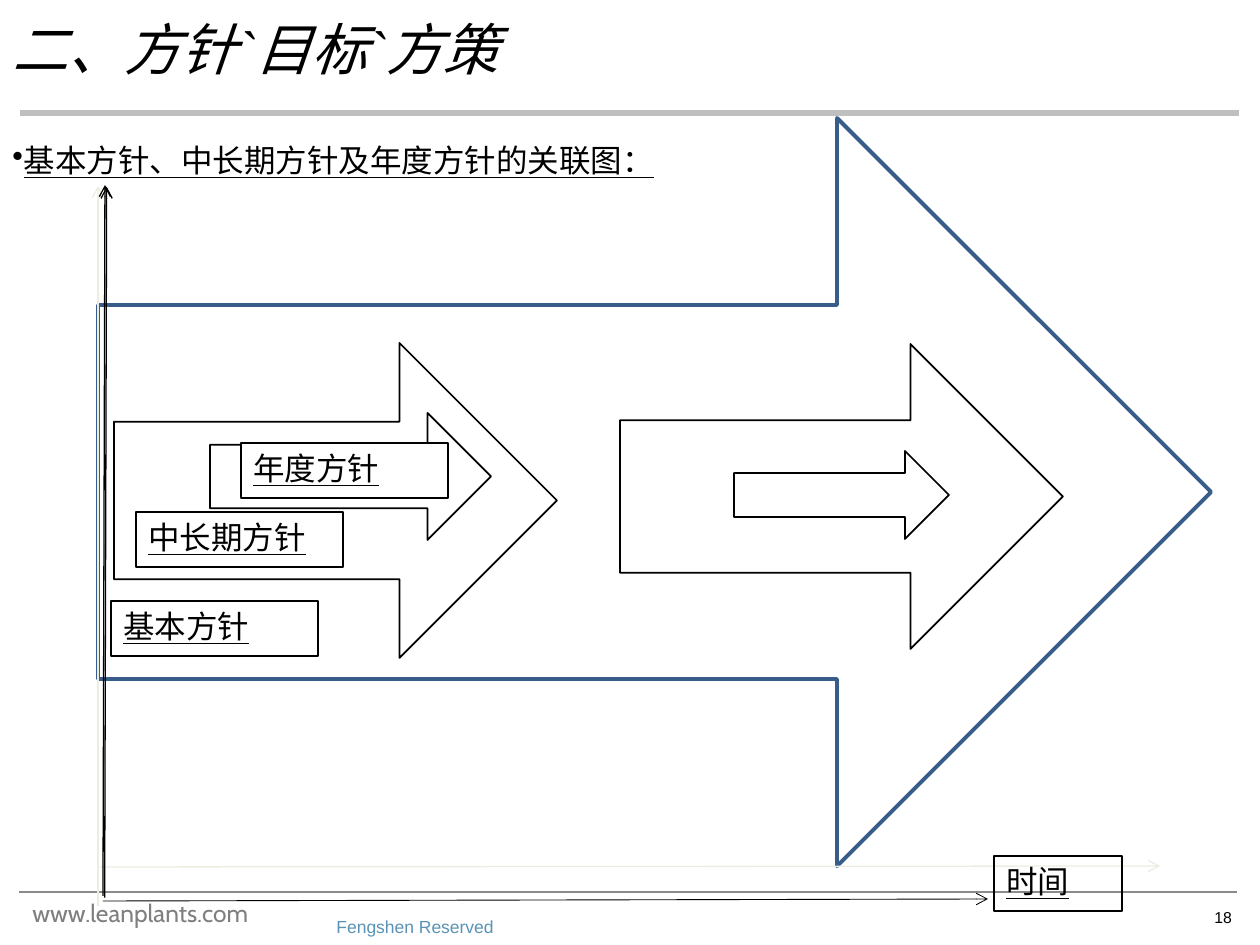
from dataclasses import dataclass
from lxml import etree
from pptx import Presentation
from pptx.dml.color import RGBColor
from pptx.enum.shapes import MSO_CONNECTOR, MSO_SHAPE
from pptx.enum.text import MSO_ANCHOR, PP_ALIGN
from pptx.oxml.ns import qn
from pptx.util import Pt

ARROW = MSO_SHAPE.RIGHT_ARROW
RECT = MSO_SHAPE.RECTANGLE
LINE = MSO_CONNECTOR.STRAIGHT
LEFT, CENTER = PP_ALIGN.LEFT, PP_ALIGN.CENTER
TOP, MIDDLE = MSO_ANCHOR.TOP, MSO_ANCHOR.MIDDLE
SCALE = 914400 / 126


@dataclass(frozen=True)
class Theme:
    black: str = "000000"
    white: str = "FFFFFF"
    blue: str = "385D8A"
    cream: str = "EEECE1"
    rule: str = "BFBFBF"
    base: str = "8B8B8B"
    site: str = "7F7F7F"
    note: str = "5A93B6"
    cjk: str = "Noto Sans CJK SC"
    sans: str = "Arial"
    serif: str = "Times New Roman"
    web: str = "Cabin"
    title: int = 32
    body: int = 18
    link: int = 14
    small: int = 10
    page: int = 9


def px(*values):
    return [round(v * SCALE) for v in values]


def put(frame, text, font, size, color, italic=False, under=False,
        align=LEFT, anchor=TOP, bullet=None, wrap=True, inset=None):
    frame.word_wrap = wrap
    frame.vertical_anchor = anchor
    if inset is not None:
        frame.margin_left = frame.margin_right = inset
        frame.margin_top = frame.margin_bottom = inset
    para = frame.paragraphs[0]
    para.alignment = align
    if bullet:
        mark = etree.SubElement(para._p.get_or_add_pPr(), qn("a:buChar"))
        mark.set("char", bullet)
    run = para.add_run()
    run.text = text
    face = run.font
    face.name, face.size = font, Pt(size)
    face.italic, face.underline = italic, under
    face.color.rgb = RGBColor.from_string(color)
    east = etree.SubElement(run._r.get_or_add_rPr(), qn("a:ea"))
    east.set("typeface", Theme.cjk)


class Board:
    def __init__(self, slide, theme):
        self.slide = slide
        self.theme = theme

    def text(self, box, words, font, size, color, **style):
        item = self.slide.shapes.add_textbox(*px(*box))
        put(item.text_frame, words, font, size, color, **style)

    def shape(self, kind, box, fill=None, line=None, width=1):
        item = self.slide.shapes.add_shape(kind, *px(*box))
        item.shadow.inherit = False
        if fill:
            item.fill.solid()
            item.fill.fore_color.rgb = RGBColor.from_string(fill)
        else:
            item.fill.background()
        item.line.color.rgb = RGBColor.from_string(line or self.theme.black)
        item.line.width = Pt(width)
        return item

    def label(self, box, words, **style):
        item = self.shape(RECT, box, **style)
        put(item.text_frame, words, self.theme.cjk, self.theme.body,
            self.theme.black, under=True)

    def line(self, ends, color, width, tip=False, shade=False):
        item = self.slide.shapes.add_connector(LINE, *px(*ends))
        item.line.color.rgb = RGBColor.from_string(color)
        item.line.width = Pt(width)
        if tip:
            tail = etree.SubElement(item.line._get_or_add_ln(), qn("a:tailEnd"))
            tail.set("type", "arrow")
        effect = etree.SubElement(item._element.spPr, qn("a:effectLst"))
        if shade:
            cast = etree.SubElement(effect, qn("a:outerShdw"),
                                    dist=str(Pt(1.4)), dir="2700000")
            etree.SubElement(cast, qn("a:srgbClr"), val=color)


def main():
    deck = Presentation()
    deck.slide_width, deck.slide_height = px(1260, 945)
    look = Theme()
    board = Board(deck.slides.add_slide(deck.slide_layouts[6]), look)

    board.line((19, 892, 1237, 892), look.base, 1)
    board.line((20, 113, 1239, 113), look.rule, 3)
    board.text((20, 892, 295, 43), "www.leanplants.com",
               look.web, look.link, look.site)
    board.text((1202, 902, 47, 34), "18", look.sans, look.page, look.black,
               wrap=False)
    board.text((0, 916, 830, 21), "Fengshen Reserved", look.sans, look.small,
               look.note, align=CENTER, anchor=MIDDLE, inset=0)
    board.text((0, 8, 756, 79), "二、方针`目标`方策", look.serif, look.title,
               look.black, italic=True)
    board.text((0, 135, 862, 54), "基本方针、中长期方针及年度方针的关联图：",
               look.cjk, look.body, look.black, under=True, bullet="•")

    board.shape(ARROW, (98, 118, 1113, 748), line=look.blue, width=2.25)
    board.line((98, 906, 98, 186), look.cream, 0.75, tip=True)
    board.line((100, 867, 1160, 866), look.cream, 0.75, tip=True)
    for box in ((114, 343, 443, 315), (620, 344, 443, 305),
                (210, 413, 281, 127), (734, 451, 215, 88)):
        board.shape(ARROW, box, fill=look.white)

    for left, top, words in ((111, 601, "基本方针"), (136, 512, "中长期方针"),
                             (241, 443, "年度方针")):
        board.label((left, top, 207, 55), words, fill=look.white)
    board.label((994, 856, 128, 55), "时间", width=0.75)
    board.line((103, 901, 988, 899), look.black, 0.5, tip=True)
    board.line((103, 896, 105, 185), look.black, 0.75, tip=True, shade=True)

    deck.save("out.pptx")


if __name__ == "__main__":
    main()
